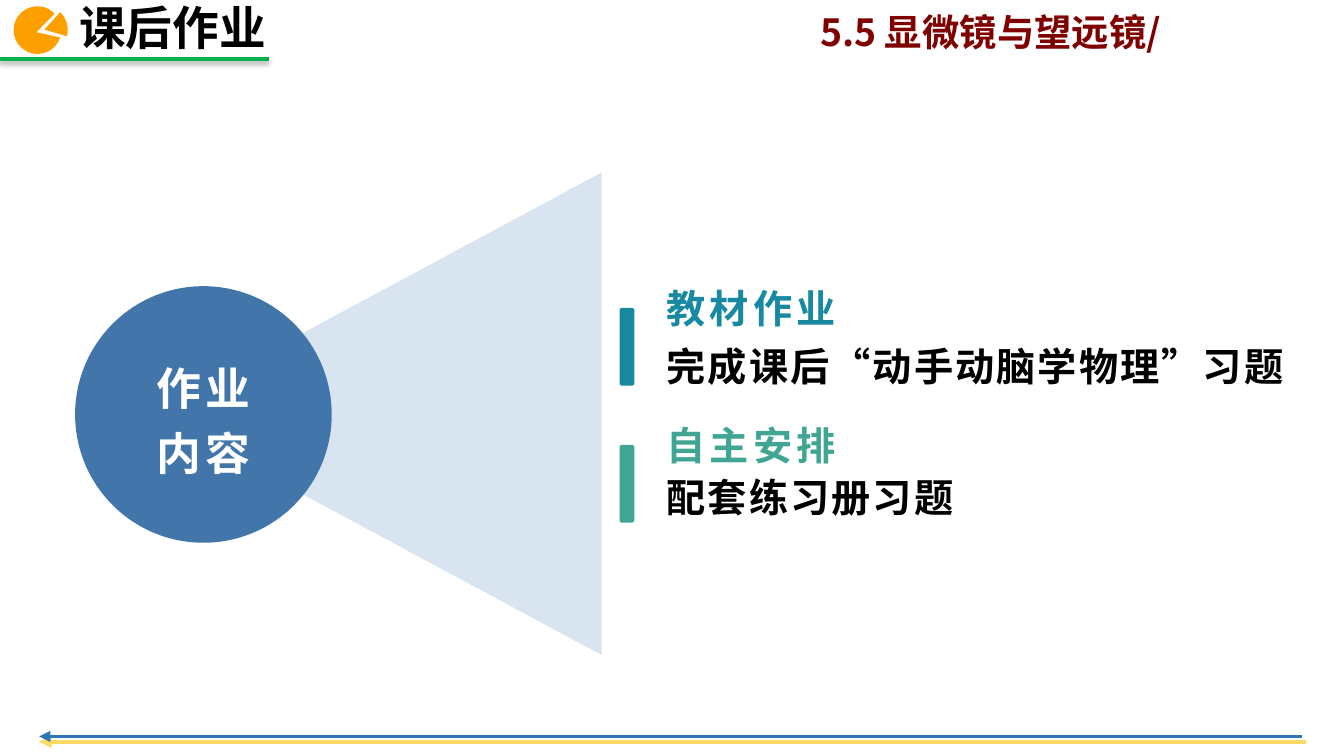
from math import cos, radians, sin

from lxml import etree
from pptx import Presentation
from pptx.dml.color import RGBColor
from pptx.enum.shapes import MSO_CONNECTOR, MSO_SHAPE
from pptx.enum.text import MSO_ANCHOR, MSO_AUTO_SIZE, PP_ALIGN
from pptx.oxml import parse_xml
from pptx.oxml.ns import nsdecls, qn
from pptx.util import Cm, Pt

STRAIGHT = MSO_CONNECTOR.STRAIGHT
TRIANGLE = MSO_SHAPE.ISOSCELES_TRIANGLE
OVAL = MSO_SHAPE.OVAL
ROUNDED = MSO_SHAPE.ROUNDED_RECTANGLE
TOP, MIDDLE, BOTTOM = MSO_ANCHOR.TOP, MSO_ANCHOR.MIDDLE, MSO_ANCHOR.BOTTOM
LEFT, CENTER = PP_ALIGN.LEFT, PP_ALIGN.CENTER
NO_FIT = MSO_AUTO_SIZE.NONE
FONT = "Noto Sans CJK SC"
COLORS = {
    "black": "000000",
    "white": "FFFFFF",
    "maroon": "800000",
    "green": "00B050",
    "orange": "FE9F00",
    "yellow": "FFD966",
    "arrow blue": "2E75B6",
    "pale blue": "D8E4F0",
    "blue": "4276AA",
    "teal": "178AA1",
    "sea green": "40A693",
}


def write(box, lines, size, color, spacing=0, anchor=TOP, align=LEFT, leading=1.0,
          top=0.1, bottom=0.1, wrap=True):
    frame = box.text_frame
    frame.auto_size = NO_FIT
    frame.word_wrap = wrap
    frame.vertical_anchor = anchor
    frame.margin_left = frame.margin_right = Cm(0.18)
    frame.margin_top, frame.margin_bottom = Cm(top), Cm(bottom)
    for index, line in enumerate(lines):
        para = frame.add_paragraph() if index else frame.paragraphs[0]
        para.alignment = align
        para.line_spacing = leading
        span = para.add_run()
        span.text = line
        span.font.size = Pt(size)
        span.font.bold = True
        span.font.color.rgb = RGBColor.from_string(COLORS[color])
        span.font.name = FONT
        properties = span._r.get_or_add_rPr()
        properties.set("spc", str(int(spacing * 100)))
        etree.SubElement(properties, qn("a:ea")).set("typeface", FONT)


def paint(shape, color):
    shape.shadow.inherit = False
    shape.fill.solid()
    shape.fill.fore_color.rgb = RGBColor.from_string(COLORS[color])
    shape.line.fill.background()


deck = Presentation()
deck.slide_width, deck.slide_height = Cm(25.4), Cm(14.29)
page = deck.slides.add_slide(deck.slide_layouts[5])
shapes = page.shapes

title = shapes.title
title.left, title.top, title.width, title.height = Cm(1.32), Cm(-0.13), Cm(3.96), Cm(1.27)
write(title, ["课后作业"], 25, "black", wrap=False)

chapter = shapes.add_textbox(Cm(15.32), Cm(0.08), Cm(7.34), Cm(1.04))
write(chapter, ["5.5 显微镜与望远镜/"], 20, "maroon")

shadow = (
    '<a:outerShdw blurRad="39370" dist="20320" dir="5400000" rotWithShape="0">'
    '<a:srgbClr val="000000"><a:alpha val="38000"/></a:srgbClr></a:outerShdw>'
)
arrow = '<a:tailEnd type="triangle" ' + nsdecls("a") + "/>"
for start, end, y, color, width, effect, pointed in (
    (-0.03, 5.08, 1.12, "green", 2, shadow, False),
    (24.69, 0.74, 14.02, "yellow", 2.25, "", True),
    (24.61, 0.74, 13.92, "arrow blue", 1.5, "", True),
):
    rule = shapes.add_connector(STRAIGHT, Cm(start), Cm(y), Cm(end), Cm(y))
    rule.line.color.rgb = RGBColor.from_string(COLORS[color])
    rule.line.width = Pt(width)
    if pointed:
        rule.line._get_or_add_ln().append(parse_xml(arrow))
    effects = f"<a:effectLst {nsdecls('a')}>{effect}</a:effectLst>"
    rule._element.spPr.append(parse_xml(effects))

pie = None
for apex_x, apex_y, center_x, center_y, radius, first, last in (
    (0.69, 0.61, 0.71, 0.57, 0.45, 18, 316),
    (0.84, 0.56, 0.8, 0.57, 0.48, -45, 14),
):
    if pie is None:
        pie = shapes.build_freeform(Cm(apex_x), Cm(apex_y))
    else:
        pie.move_to(Cm(apex_x), Cm(apex_y))
    steps = 40
    angles = [radians(first + (last - first) * step / steps) for step in range(steps + 1)]
    arc = [(Cm(center_x + radius * cos(a)), Cm(center_y + radius * sin(a))) for a in angles]
    pie.add_line_segments(arc, close=True)
paint(pie.convert_to_shape(), "orange")

beam = shapes.add_shape(TRIANGLE, Cm(2.57), Cm(3.58), Cm(9.12), Cm(8.48))
beam.rotation = 270
paint(beam, "pale blue")

topic = shapes.add_shape(OVAL, Cm(1.42), Cm(5.41), Cm(4.85), Cm(4.85))
paint(topic, "blue")
write(topic, ["作业", "内容"], 24, "white", 2.2, MIDDLE, CENTER, 1.2, 0.18, 0.18)

for heading, task, color, top, task_top, task_width in (
    ("教材作业", "完成课后“动手动脑学物理”习题", "teal", 5.41, 6.35, 15.39),
    ("自主安排", "配套练习册习题", "sea green", 8, 8.84, 10.16),
):
    bar = shapes.add_shape(ROUNDED, Cm(11.71), Cm(top + 0.41), Cm(0.28), Cm(1.47))
    paint(bar, color)
    box = shapes.add_textbox(Cm(12.42), Cm(top), Cm(4.29), Cm(0.86))
    write(box, [heading], 21, color, 2.2, BOTTOM, LEFT, 1.2, 0.18, 0)
    box = shapes.add_textbox(Cm(12.42), Cm(task_top), Cm(task_width), Cm(1.04))
    write(box, [task], 21, "black", 1.1, MIDDLE, LEFT, 1.2, 0, 0.1)

deck.save("out.pptx")
